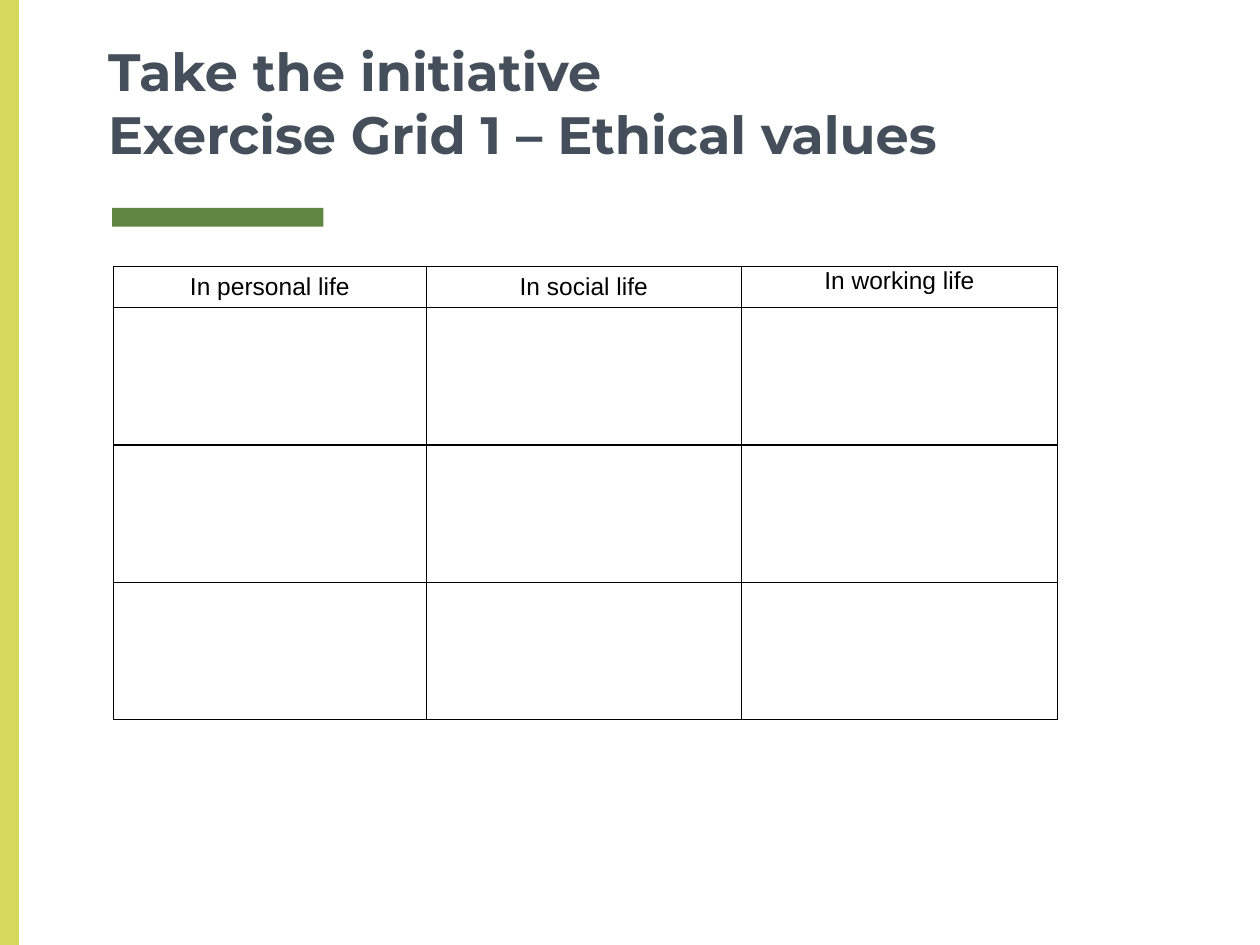
from dataclasses import dataclass

from lxml.etree import SubElement
from pptx import Presentation
from pptx.dml.color import RGBColor
from pptx.enum.shapes import MSO_SHAPE as Preset
from pptx.enum.text import MSO_ANCHOR as Anchor, PP_ALIGN as Align
from pptx.oxml.ns import qn
from pptx.util import Cm, Pt

COLOURS = {
    "lime": "D5D85A",
    "green": "608643",
    "slate": "454F5B",
    "black": "000000",
}


@dataclass
class Bar:
    left: float
    top: float
    width: float
    height: float
    colour: str


@dataclass
class Heading:
    text: str
    anchor: Anchor


BARS = [
    Bar(2.26, 4.19, 4.26, 0.38, "green"),
    Bar(0, 0, 0.38, 19.05, "lime"),
]
HEADINGS = [
    Heading("In personal life", Anchor.MIDDLE),
    Heading("In social life", Anchor.MIDDLE),
    Heading("In working life", Anchor.TOP),
]
COLUMN_WIDTHS = [6.3, 6.36, 6.36]
ROW_HEIGHTS = [0.82] + 3 * [2.77]


def colour(name: str) -> RGBColor:
    return RGBColor.from_string(COLOURS[name])


def style_runs(paragraph, face: str, size: float, ink: str, bold: bool) -> None:
    for run in paragraph.runs:
        run.font.name = face
        run.font.size = Pt(size)
        run.font.bold = bold
        run.font.color.rgb = colour(ink)


def draw_bar(slide, bar: Bar) -> None:
    shape = slide.shapes.add_shape(
        Preset.RECTANGLE, Cm(bar.left), Cm(bar.top), Cm(bar.width), Cm(bar.height))
    shape.shadow.inherit = False
    shape.fill.solid()
    shape.fill.fore_color.rgb = colour(bar.colour)
    shape.line.fill.background()


def draw_title(slide, text: str) -> None:
    frame = slide.shapes.add_textbox(Cm(1.93), Cm(0), Cm(21.56), Cm(3.58)).text_frame
    frame.word_wrap = True
    frame.vertical_anchor = Anchor.BOTTOM
    frame.margin_left = frame.margin_right = Cm(0.25)
    frame.margin_top = frame.margin_bottom = Cm(0.25)
    title = frame.paragraphs[0]
    title.text = text
    style_runs(title, "Montserrat", 30, "slate", True)


def outline_cell(cell) -> None:
    cell.fill.background()
    properties = cell._tc.get_or_add_tcPr()
    for position, side in enumerate(("a:lnL", "a:lnR", "a:lnT", "a:lnB")):
        border = SubElement(properties, qn(side), w=str(Pt(0.75)))
        fill = SubElement(border, qn("a:solidFill"))
        SubElement(fill, qn("a:srgbClr"), val=COLOURS["black"])
        # Borders come before the fill in the cell properties
        properties.insert(position, border)


def draw_grid(slide) -> None:
    grid = slide.shapes.add_table(
        len(ROW_HEIGHTS), len(COLUMN_WIDTHS), Cm(2.29), Cm(5.38),
        Cm(sum(COLUMN_WIDTHS)), Cm(sum(ROW_HEIGHTS))).table
    grid.first_row = grid.horz_banding = False
    for column, width in zip(grid.columns, COLUMN_WIDTHS):
        column.width = Cm(width)
    for row, height in zip(grid.rows, ROW_HEIGHTS):
        row.height = Cm(height)
    for cell in grid.iter_cells():
        outline_cell(cell)
    for cell, heading in zip(grid.rows[0].cells, HEADINGS):
        cell.margin_left = cell.margin_right = Cm(0.18)
        cell.margin_top = cell.margin_bottom = Cm(0)
        cell.vertical_anchor = heading.anchor
        label = cell.text_frame.paragraphs[0]
        label.text = heading.text
        label.alignment = Align.CENTER
        style_runs(label, "Arial", 14, "black", False)


def main() -> None:
    deck = Presentation()
    deck.slide_width, deck.slide_height = Cm(25.4), Cm(19.05)
    slide = deck.slides.add_slide(deck.slide_layouts[6])

    # Side stripe and title underline
    for bar in BARS:
        draw_bar(slide, bar)

    # Title and exercise grid
    draw_title(slide, "Take the initiative\nExercise Grid 1 – Ethical values")
    draw_grid(slide)

    deck.save("out.pptx")


if __name__ == "__main__":
    main()
